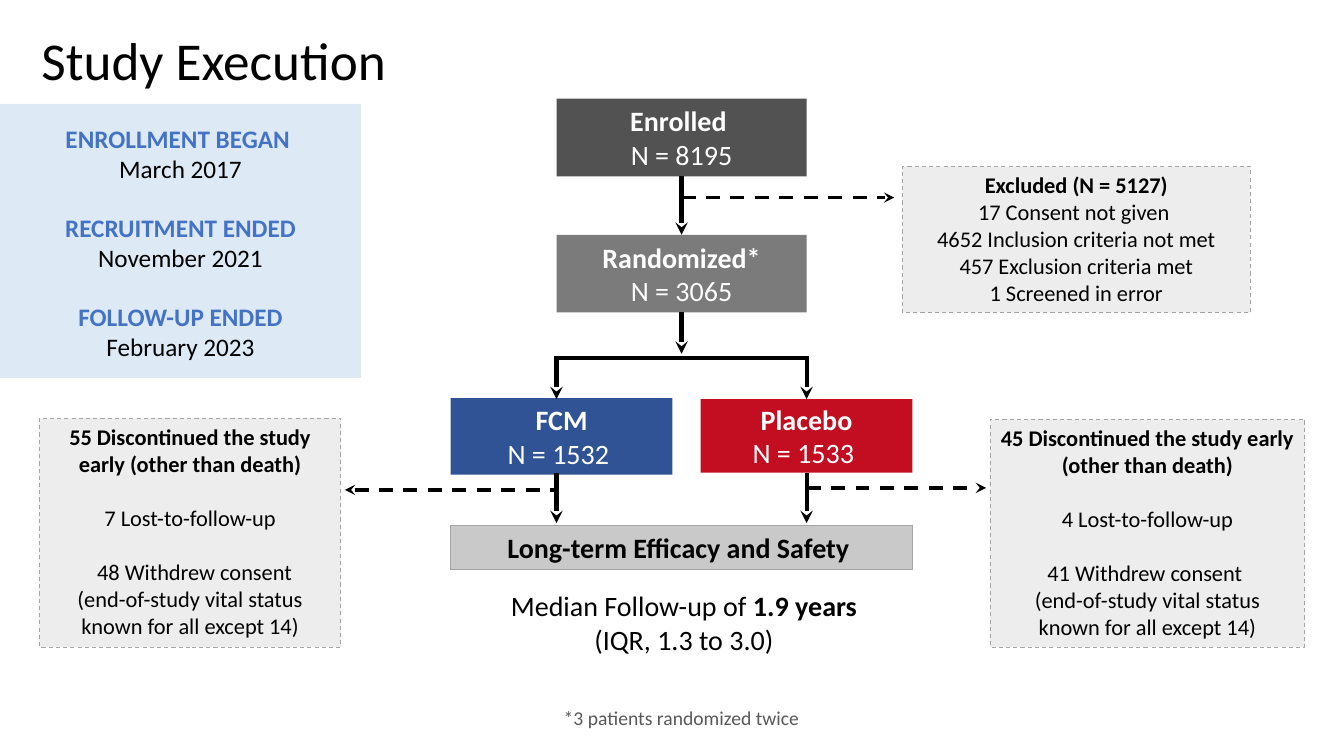
from dataclasses import dataclass

from lxml.etree import SubElement
from pptx import Presentation
from pptx.dml.color import RGBColor
from pptx.enum.dml import MSO_LINE
from pptx.enum.shapes import MSO_CONNECTOR, MSO_SHAPE
from pptx.enum.text import MSO_ANCHOR, PP_ALIGN
from pptx.oxml.ns import qn
from pptx.util import Inches, Pt


@dataclass(frozen=True)
class Theme:
    font: str = "Calibri"
    black: str = "000000"
    white: str = "FFFFFF"
    panel: str = "DDEAF6"
    heading: str = "4472C4"
    note: str = "EDEDED"
    note_edge: str = "A5A5A5"
    enrolled: str = "525252"
    randomized: str = "7B7B7B"
    fcm: str = "305395"
    placebo: str = "C20E20"
    outcome: str = "C9C9C9"
    footnote: str = "595959"
    title_size: float = 38
    stage_size: float = 20
    milestone_size: float = 18
    note_size: float = 16
    footnote_size: float = 14
    flow_width: float = 3
    aside_width: float = 2.5
    edge_width: float = 0.75


THEME = Theme()


@dataclass(frozen=True)
class Box:
    left: float
    top: float
    width: float
    height: float

    @property
    def right(self):
        return self.left + self.width

    @property
    def middle(self):
        return self.left + self.width / 2

    def inches(self):
        return [Inches(v) for v in (self.left, self.top, self.width, self.height)]


def rgb(color):
    return RGBColor.from_string(color)


def write(shape, lines, size, color=THEME.black, anchor=MSO_ANCHOR.TOP, align=PP_ALIGN.CENTER):
    """Fill a shape with lines; each is a list of (text, bold) or (text, bold, color) runs."""
    frame = shape.text_frame
    frame.word_wrap = True
    frame.vertical_anchor = anchor
    for index, line in enumerate(lines):
        paragraph = frame.paragraphs[0] if index == 0 else frame.add_paragraph()
        paragraph.alignment = align
        for text, bold, *own_color in line:
            run = paragraph.add_run()
            run.text = text
            run_format = {"name": THEME.font, "size": Pt(size), "bold": bold}
            for key, value in run_format.items():
                setattr(run.font, key, value)
            run.font.color.rgb = rgb(own_color[0] if own_color else color)
    return frame


def text_box(slide, box, lines, size, **options):
    return write(slide.shapes.add_textbox(*box.inches()), lines, size, **options)


def block(slide, box, fill, edge=None, dashed=False):
    shape = slide.shapes.add_shape(MSO_SHAPE.RECTANGLE, *box.inches())
    shape.shadow.inherit = False
    shape.fill.solid()
    shape.fill.fore_color.rgb = rgb(fill)
    if edge:
        shape.line.color.rgb = rgb(edge)
        shape.line.width = Pt(THEME.edge_width)
        if dashed:
            shape.line.dash_style = MSO_LINE.DASH
    else:
        shape.line.fill.background()
    return shape


def connect(slide, start, end, width=THEME.flow_width, dashed=False, arrow="a:tailEnd"):
    ends = [Inches(v) for v in (*start, *end)]
    line = slide.shapes.add_connector(MSO_CONNECTOR.STRAIGHT, *ends)
    line.line.color.rgb = rgb(THEME.black)
    line.line.width = Pt(width)
    if dashed:
        line.line.dash_style = MSO_LINE.DASH
    if arrow:
        SubElement(line.line._get_or_add_ln(), qn(arrow), type="stealth")
    SubElement(line._element.spPr, qn("a:effectLst"))
    return line


def title(slide, box):
    frame = text_box(slide, box, [[("Study Execution", False)]], THEME.title_size,
                     anchor=MSO_ANCHOR.MIDDLE, align=PP_ALIGN.LEFT)
    for side in ("left", "top", "right", "bottom"):
        setattr(frame, f"margin_{side}", 0)
    frame.paragraphs[0].line_spacing = 0.9


def milestones(slide, box):
    block(slide, box, THEME.panel)
    dates = [("ENROLLMENT BEGAN ", "March 2017"),
             ("RECRUITMENT ENDED", "November 2021"),
             ("FOLLOW-UP ENDED", "February 2023")]
    for row, (event, date) in enumerate(dates):
        entry = Box(box.left, box.top + 0.14 + row * 0.885, box.width, 0.71)
        text_box(slide, entry, [[(event, True, THEME.heading)], [(date, False)]],
                 THEME.milestone_size)


def stage(slide, box, name, count, fill):
    shape = block(slide, box, fill)
    write(shape, [[(name, True)], [(count, False)]], THEME.stage_size, THEME.white,
          MSO_ANCHOR.MIDDLE)
    return shape


def trial_flow(slide, box):
    """Draw the central flow; return the x of the left arm, the trunk and the right arm."""
    step_width = 2.48
    trunk = box.middle
    left_arm, right_arm = trunk - step_width / 2, trunk + step_width / 2
    branch_y, arm_y, outcome_y = box.top + 2.57, box.top + 2.98, box.top + 4.23

    enrolled = stage(slide, Box(left_arm, box.top, step_width, 0.77),
                     "Enrolled ", "N = 8195", THEME.enrolled)
    randomized = stage(slide, Box(left_arm, box.top + 1.35, step_width, 0.77),
                       "Randomized*", "N = 3065", THEME.randomized)
    stage(slide, Box(box.left, arm_y - 0.01, 2.2, 0.76), "FCM", "N = 1532 ", THEME.fcm)
    placebo = stage(slide, Box(box.right - 2.1, arm_y, 2.1, 0.73),
                    "Placebo", "N = 1533 ", THEME.placebo)

    enrolling = connect(slide, (trunk, box.top + 0.77), (trunk, box.top + 1.35))
    enrolling.begin_connect(enrolled, 2)
    enrolling.end_connect(randomized, 0)
    splitting = connect(slide, (trunk, box.top + 2.12), (trunk, branch_y - 0.04))
    splitting.begin_connect(randomized, 2)
    connect(slide, (left_arm, branch_y), (right_arm, branch_y), arrow=None)

    for arm in (left_arm, right_arm):
        into_arm = connect(slide, (arm, branch_y - 0.02), (arm, arm_y))
        out_of_arm = connect(slide, (arm, arm_y + 0.73), (arm, outcome_y - 0.02))
        if arm == right_arm:
            into_arm.end_connect(placebo, 0)
            out_of_arm.begin_connect(placebo, 2)

    outcome = block(slide, Box(box.left, outcome_y, box.width, 0.44),
                    THEME.outcome, THEME.note_edge)
    write(outcome, [[("Long-term Efficacy and Safety ", True)]], THEME.stage_size)
    text_box(slide, Box(box.left - 0.16, outcome_y + 0.58, 5.01, 0.77),
             [[("Median Follow-up of ", False), ("1.9 years ", True)],
              [("(IQR, 1.3 to 3.0) ", False)]], THEME.stage_size)
    return left_arm, trunk, right_arm


def side_note(slide, box, lines, axis, arrow_y, gap=0.04, spaced=(), indented=None):
    """Draw a note, headed by its first line, with a dashed arrow from the flow axis."""
    frame = write(block(slide, box, THEME.note, THEME.note_edge, dashed=True),
                  [[(line, row == 0)] for row, line in enumerate(lines)], THEME.note_size)
    for row in spaced:
        frame.paragraphs[row].space_before = Pt(19.5)
    if indented is not None:
        frame.paragraphs[indented]._p.get_or_add_pPr().set("marL", str(Inches(0.14)))
    dash = {"width": THEME.aside_width, "dashed": True}
    if box.left > axis:
        connect(slide, (axis, arrow_y), (box.left - gap, arrow_y), **dash)
    else:
        connect(slide, (box.right + gap, arrow_y), (axis, arrow_y), arrow="a:headEnd", **dash)


def footnote(slide, box):
    text_box(slide, box, [[("*3 patients randomized twice", False)]],
             THEME.footnote_size, color=THEME.footnote)


def main():
    deck = Presentation()
    deck.slide_width, deck.slide_height = Inches(13.33), Inches(7.5)
    slide = deck.slides.add_slide(deck.slide_layouts[6])
    milestones(slide, Box(0, 1.03, 3.58, 2.72))
    title(slide, Box(0.41, 0, 12.51, 1.25))
    left_arm, trunk, right_arm = trial_flow(slide, Box(4.47, 0.98, 4.58, 5.58))
    side_note(slide, Box(8.95, 1.65, 3.45, 1.45),
              ["Excluded (N = 5127)", "17 Consent not given ", "4652 Inclusion criteria not met",
               "457 Exclusion criteria met", "1 Screened in error"], trunk, 1.96, gap=0.08)
    side_note(slide, Box(9.82, 4.16, 3.12, 2.26),
              ["45 Discontinued the study early (other than death)", "4 Lost-to-follow-up",
               "41 Withdrew consent ", "(end-of-study vital status", "known for all except 14)"],
              right_arm, 4.84, spaced=(1, 2))
    side_note(slide, Box(0.39, 4.15, 2.99, 2.27),
              ["55 Discontinued the study early (other than death)", "7 Lost-to-follow-up",
               "48 Withdrew consent ", "(end-of-study vital status known for all except 14)"],
              left_arm, 4.86, spaced=(1, 2), indented=2)
    footnote(slide, Box(4.96, 6.95, 3.6, 0.34))
    deck.save("out.pptx")


if __name__ == "__main__":
    main()
